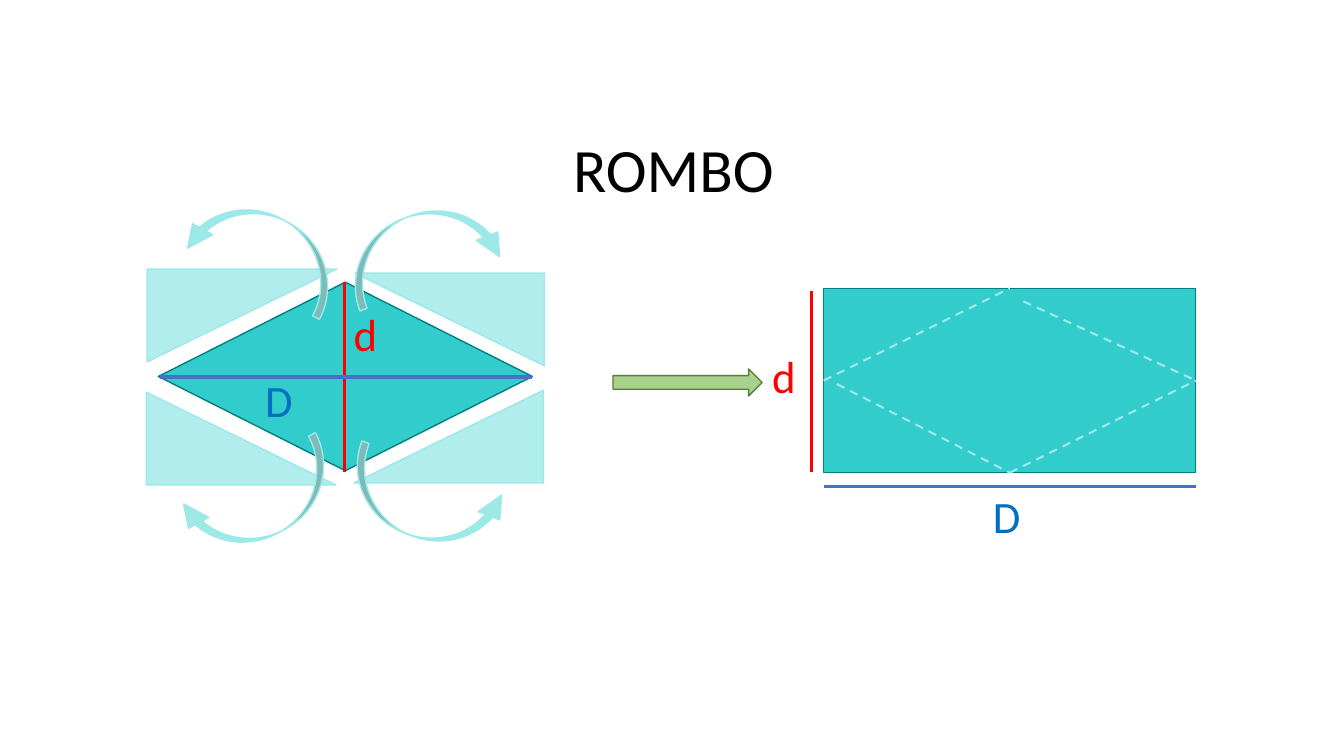
"""Builds a slide showing how a rhombus becomes a rectangle with half the area doubled."""
from lxml.etree import SubElement
from pptx import Presentation
from pptx.dml.color import RGBColor
from pptx.enum.dml import MSO_LINE
from pptx.enum.shapes import MSO_CONNECTOR, MSO_SHAPE as SHAPE
from pptx.enum.text import MSO_ANCHOR, MSO_AUTO_SIZE, PP_ALIGN
from pptx.oxml.ns import qn
from pptx.util import Inches, Pt

BLACK = RGBColor(0x00, 0x00, 0x00)
TURQUOISE = RGBColor(0x33, 0xCC, 0xCC)
TEAL = RGBColor(0x00, 0x80, 0x80)
AQUA = RGBColor(0x9D, 0xE9, 0xE7)
PALE_AQUA = RGBColor(0xB1, 0xED, 0xEC)
GREEN = RGBColor(0xA9, 0xD1, 0x8E)
DARK_GREEN = RGBColor(0x54, 0x82, 0x35)
RED = RGBColor(0xFF, 0x00, 0x00)
LINE_BLUE = RGBColor(0x44, 0x72, 0xC4)
TEXT_BLUE = RGBColor(0x00, 0x70, 0xC0)


def write_text(frame, text, size=32, color=BLACK, align=PP_ALIGN.LEFT, spacing=1.0):
    paragraph = frame.paragraphs[0]
    paragraph.alignment = align
    paragraph.line_spacing = spacing
    run = paragraph.add_run()
    run.text = text
    run.font.name = "Calibri"
    run.font.size = Pt(size)
    run.font.color.rgb = color


def add_figure(kind, box, fill, outline, rotation=0, flipped=False):
    figure = slide.shapes.add_shape(kind, *map(Inches, box))
    figure.shadow.inherit = False
    figure.fill.solid()
    figure.fill.fore_color.rgb = fill
    figure.line.color.rgb = outline
    figure.line.width = Pt(1)
    figure.rotation = rotation
    if flipped:
        figure.element.spPr.find(qn("a:xfrm")).set("flipV", "1")
    return figure


prs = Presentation()
prs.slide_width = Inches(13.33)
prs.slide_height = Inches(7.5)
slide = prs.slides.add_slide(prs.slide_layouts[5])

title = slide.shapes.title
title.left, title.top = Inches(0.93), Inches(0.99)
title.width, title.height = Inches(11.5), Inches(1.45)
title.text_frame.vertical_anchor = MSO_ANCHOR.MIDDLE
write_text(title.text_frame, "ROMBO", size=44, align=PP_ALIGN.CENTER, spacing=0.9)

rectangle = add_figure(SHAPE.RECTANGLE, (8.17, 2.86, 3.69, 1.83), TURQUOISE, TEAL)
add_figure(SHAPE.DIAMOND, (1.57, 2.8, 3.71, 1.87), TURQUOISE, TEAL)
add_figure(SHAPE.RIGHT_ARROW, (6.08, 3.66, 1.48, 0.27), GREEN, DARK_GREEN)

diagonals = [
    ("d", (3.42, 4.68, 3.42, 2.8), RED, (3.41, 2.99, 0.44, 0.64), RED),
    ("D", (1.59, 3.74, 5.28, 3.74), LINE_BLUE, (2.53, 3.65, 0.48, 0.64), TEXT_BLUE),
    ("d", (8.05, 4.68, 8.05, 2.89), RED, (7.56, 3.41, 0.44, 0.64), RED),
    ("D", (8.17, 4.83, 11.86, 4.83), LINE_BLUE, (9.75, 4.8, 0.48, 0.64), TEXT_BLUE),
]
for letter, ends, line_color, box, letter_color in diagonals:
    measure = slide.shapes.add_group_shape()
    diagonal = measure.shapes.add_connector(MSO_CONNECTOR.STRAIGHT, *map(Inches, ends))
    diagonal.line.color.rgb = line_color
    diagonal.line.width = Pt(2.25)
    SubElement(diagonal.element.spPr, qn("a:effectLst"))
    label = measure.shapes.add_textbox(*map(Inches, box))
    label.text_frame.word_wrap = False
    label.text_frame.auto_size = MSO_AUTO_SIZE.SHAPE_TO_FIT_TEXT
    write_text(label.text_frame, letter, color=letter_color)

corners = [
    (1.45, 3.89, 0, False, 1.79, 4.63, 151.6, True),
    (3.52, 2.71, 180, False, 3.39, 2.12, 338.8, True),
    (3.51, 3.87, 180, True, 3.41, 4.64, 21.2, False),
    (1.46, 2.67, 0, True, 1.83, 2.13, 208.4, False),
]
for left, top, rotation, flipped, *_ in corners:
    add_figure(SHAPE.RIGHT_TRIANGLE, (left, top, 1.88, 0.92), PALE_AQUA, AQUA, rotation, flipped)
for *_, left, top, rotation, flipped in corners:
    turn = add_figure(SHAPE.CURVED_UP_ARROW, (left, top, 1.6, 0.7), AQUA, AQUA, rotation, flipped)
    for index, ratio in enumerate((0.109, 0.326, 0.339)):
        turn.adjustments[index] = ratio

TOP, LEFT, BOTTOM, RIGHT = range(4)
rhombus_sides = [
    ((10.02, 4.69, 11.86, 3.78), BOTTOM, RIGHT),
    ((10.15, 2.99, 11.86, 3.78), None, RIGHT),
    ((8.17, 3.78, 10.02, 2.86), LEFT, TOP),
    ((8.3, 3.81, 10.02, 4.69), None, BOTTOM),
]
for ends, start_site, end_site in rhombus_sides:
    side = slide.shapes.add_connector(MSO_CONNECTOR.STRAIGHT, *map(Inches, ends))
    if start_site is not None:
        side.begin_connect(rectangle, start_site)
    side.end_connect(rectangle, end_site)
    side.line.color.rgb = AQUA
    side.line.width = Pt(1.5)
    side.line.dash_style = MSO_LINE.DASH
    SubElement(side.element.spPr, qn("a:effectLst"))

prs.save("out.pptx")
